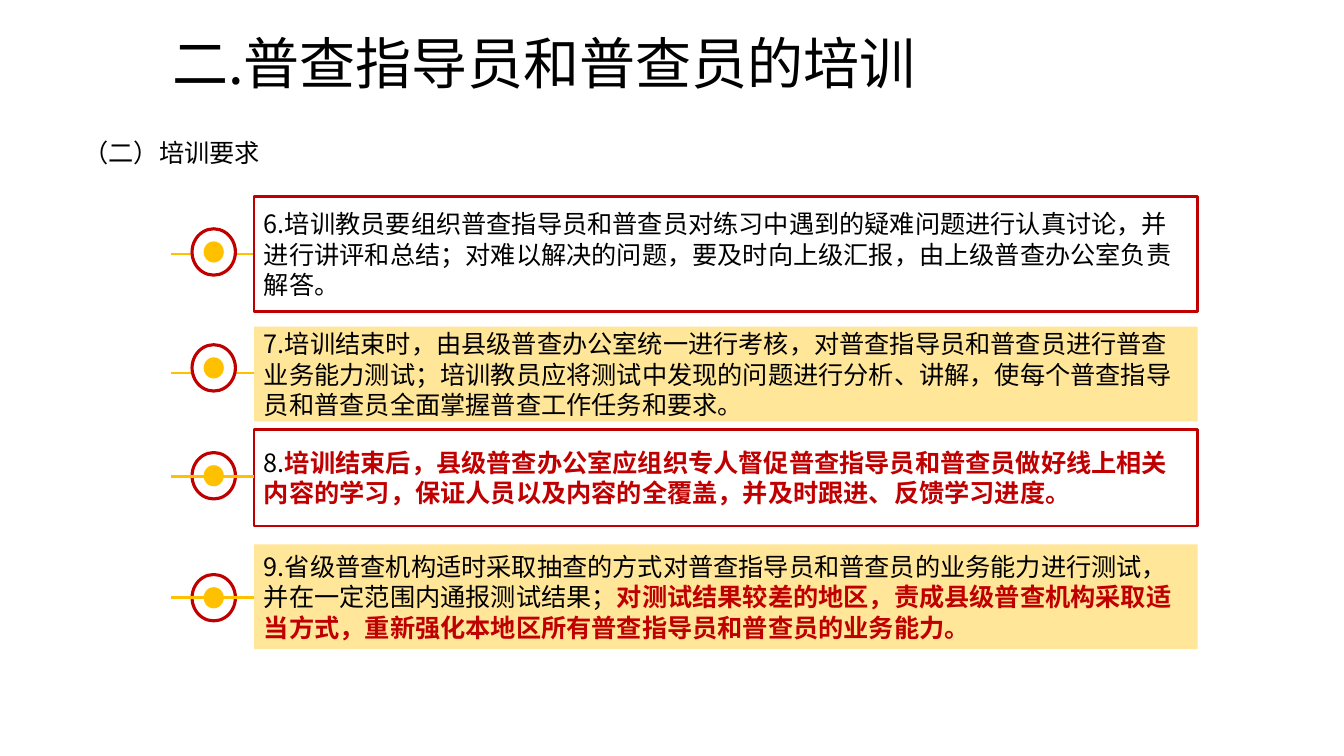
import pptx
import pptx.util
import pptx.dml.color
import pptx.enum.shapes
import pptx.enum.text
import pptx.oxml.ns
import lxml.etree

SLIDE_WIDTH, SLIDE_HEIGHT = 13.33, 7.5
FONT = "Noto Sans CJK SC"
BLACK, WHITE, RED, GOLD, PALE = "000000", "FFFFFF", "C00000", "FFC000", "FFE699"
SHAPES = pptx.enum.shapes.MSO_SHAPE
ANCHORS = pptx.enum.text.MSO_ANCHOR
PANEL_LEFT, PANEL_WIDTH = 2.52, 9.36
LINE_LENGTH = 0.82
RING_WIDTH, RING_HEIGHT = 0.43, 0.46
DOT_WIDTH, DOT_HEIGHT = 0.2, 0.21

# Each item: panel top and height, ring top, line height, line over the ring, text spans
ITEMS = [
    (1.95, 1.14, 2.27, 2.52, False, [
        ("6.培训教员要组织普查指导员和普查员对练习中遇到的疑难问题进行认真讨论，"
         "并进行讲评和总结；对难以解决的问题，要及时向上级汇报，由上级普查办公室负责解答。", False)]),
    (3.24, 0.94, 3.42, 3.7, False, [
        ("7.培训结束时，由县级普查办公室统一进行考核，对普查指导员和普查员进行普查业务能力测试；"
         "培训教员应将测试中发现的问题进行分析、讲解，使每个普查指导员和普查员全面掌握普查工作任务和要求。", False)]),
    (4.26, 0.96, 4.49, 4.73, True, [
        ("8.", False),
        ("培训结束后，县级普查办公室应组织专人督促普查指导员和普查员做好线上相关内容的学习，"
         "保证人员以及内容的全覆盖，并及时跟进、反馈学习进度。", True)]),
    (5.4, 1.04, 5.7, 5.93, True, [
        ("9.省级普查机构适时采取抽查的方式对普查指导员和普查员的业务能力进行测试，"
         "并在一定范围内通报测试结果；", False),
        ("对测试结果较差的地区，责成县级普查机构采取适当方式，"
         "重新强化本地区所有普查指导员和普查员的业务能力。", True)]),
]


def color(value):
    return pptx.dml.color.RGBColor.from_string(value)


def inches(*lengths):
    return [pptx.util.Inches(length) for length in lengths]


def write(shape, spans, size, anchor, spacing=1.0):
    """Fill a shape with one left-aligned paragraph of (text, emphasised) spans."""
    frame = shape.text_frame
    frame.word_wrap = True
    frame.vertical_anchor = anchor
    para = frame.paragraphs[0]
    para.alignment = pptx.enum.text.PP_ALIGN.LEFT
    para.line_spacing = spacing
    for text, emphasised in spans:
        span = para.add_run()
        span.text = text
        span.font.size = pptx.util.Pt(size)
        span.font.bold = emphasised
        span.font.color.rgb = color(RED if emphasised else BLACK)
        span.font.name = FONT
        # East Asian typeface
        lxml.etree.SubElement(span.font._element, pptx.oxml.ns.qn("a:ea"), typeface=FONT)


def add_text(page, box, text, size, anchor, spacing):
    shape = page.shapes.add_textbox(*inches(*box))
    write(shape, [(text, False)], size, anchor, spacing)


def add_block(shapes, kind, box, fill, line=None, line_width=2):
    shape = shapes.add_shape(kind, *inches(*box))
    shape.shadow.inherit = False
    shape.fill.solid()
    shape.fill.fore_color.rgb = color(fill)
    if line:
        shape.line.color.rgb = color(line)
        shape.line.width = pptx.util.Pt(line_width)
    else:
        shape.line.fill.background()
    return shape


def add_lead_line(page, height):
    ends = inches(PANEL_LEFT - LINE_LENGTH, height, PANEL_LEFT, height)
    line = page.shapes.add_connector(pptx.enum.shapes.MSO_CONNECTOR.STRAIGHT, *ends)
    line.line.color.rgb = color(GOLD)
    line.line.width = pptx.util.Pt(2)
    lxml.etree.SubElement(line._element.spPr, pptx.oxml.ns.qn("a:effectLst"))


def add_marker(page, left, top):
    """A red ring with a gold dot at its centre."""
    marker = page.shapes.add_group_shape().shapes
    add_block(marker, SHAPES.OVAL, (left, top, RING_WIDTH, RING_HEIGHT), WHITE, RED, 2.25)
    dot = (left + (RING_WIDTH - DOT_WIDTH) / 2, top + (RING_HEIGHT - DOT_HEIGHT) / 2,
           DOT_WIDTH, DOT_HEIGHT)
    add_block(marker, SHAPES.OVAL, dot, GOLD)


def add_item(page, box, outlined, ring_top, line_height, line_over, spans):
    left = box[0]
    fill, line = (WHITE, RED) if outlined else (PALE, None)
    if not line_over:
        add_lead_line(page, line_height)
    add_marker(page, left - 0.615, ring_top)
    panel = add_block(page.shapes, SHAPES.RECTANGLE, box, fill, line)
    write(panel, spans, 18, ANCHORS.MIDDLE)
    if line_over:
        add_lead_line(page, line_height)


def build_page(deck):
    page = deck.slides.add_slide(deck.slide_layouts[6])
    # Headings
    add_text(page, (1.61, -0.3, 11.5, 1.31), "二.普查指导员和普查员的培训", 40, ANCHORS.BOTTOM, 0.9)
    add_text(page, (0.73, 1.28, 3.15, 0.41), "（二）培训要求", 18, ANCHORS.TOP, 1.1)
    # Requirements, alternately outlined and filled
    for index, (top, height, *details) in enumerate(ITEMS):
        add_item(page, (PANEL_LEFT, top, PANEL_WIDTH, height), index % 2 == 0, *details)


def main():
    deck = pptx.Presentation()
    deck.slide_width, deck.slide_height = inches(SLIDE_WIDTH, SLIDE_HEIGHT)
    build_page(deck)
    deck.save("out.pptx")


if __name__ == "__main__":
    main()
